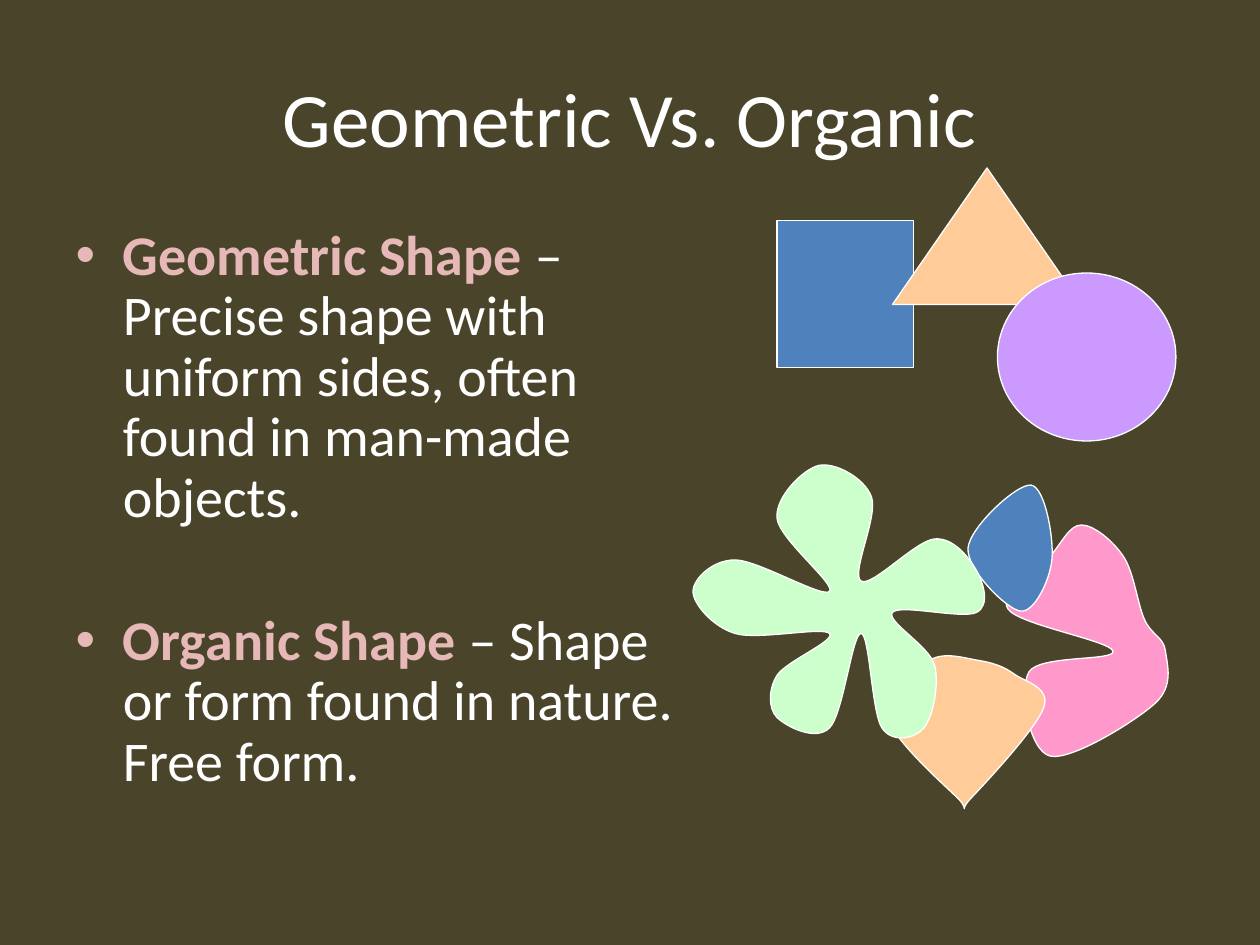
from pptx import Presentation
from pptx.dml.color import RGBColor
from pptx.enum.shapes import MSO_SHAPE
from pptx.enum.text import MSO_ANCHOR, MSO_AUTO_SIZE, PP_ALIGN
from pptx.oxml.ns import qn
from pptx.util import Inches, Pt

RECTANGLE, TRIANGLE, OVAL = MSO_SHAPE.RECTANGLE, MSO_SHAPE.ISOSCELES_TRIANGLE, MSO_SHAPE.OVAL
MIDDLE, NO_FIT, CENTER = MSO_ANCHOR.MIDDLE, MSO_AUTO_SIZE.NONE, PP_ALIGN.CENTER

COLORS = {
    "olive": "4A452A", "white": "FFFFFF", "rose": "E6B9B8", "blue": "4F81BD",
    "peach": "FFCC99", "violet": "CC99FF", "pink": "FF99CC", "mint": "CCFFCC",
}
CELL = Inches(1) // 12  # the slide is a grid of 120 columns by 90 rows


def add_text(para, text, size=32, color="white", bold=False):
    span = para.add_run()
    span.text = text
    span.font.name = "Calibri"
    span.font.size = Pt(size)
    span.font.bold = bold
    span.font.color.rgb = RGBColor.from_string(COLORS[color])


def paint(shape, color):
    shape.shadow.inherit = False
    shape.fill.solid()
    shape.fill.fore_color.rgb = RGBColor.from_string(COLORS[color])
    shape.line.color.rgb = RGBColor.from_string(COLORS["white"])
    shape.line.width = Pt(0.75)


deck = Presentation()
deck.slide_width, deck.slide_height = 120 * CELL, 90 * CELL
page = deck.slides.add_slide(deck.slide_layouts[1])
page.background.fill.solid()
page.background.fill.fore_color.rgb = RGBColor.from_string(COLORS["olive"])

# Title and body placeholders
title, body = page.shapes.title, page.placeholders[1]
for box, (left, top, width, height) in (
    (title, (6, 3.6, 108, 15)),
    (body, (6, 21, 61, 59.4)),
):
    box.left, box.top = round(left * CELL), round(top * CELL)
    box.width, box.height = round(width * CELL), round(height * CELL)
    box.text_frame.word_wrap = True
    box.text_frame.auto_size = NO_FIT

title.text_frame.vertical_anchor = MIDDLE
heading = title.text_frame.paragraphs[0]
heading.alignment = CENTER
add_text(heading, "Geometric Vs. Organic", size=44)

# Definitions, one bullet each
definitions = [
    ("Geometric Shape ", "– Precise shape with uniform sides, often found in man-made objects.", 6.4),
    ("Organic Shape ", "– Shape or form found in nature. Free form.", 47),
]
for index, (term, meaning, gap) in enumerate(definitions):
    para = body.text_frame.add_paragraph() if index else body.text_frame.paragraphs[0]
    para.line_spacing = 0.9
    para.space_before = Pt(gap)
    add_text(para, term, color="rose", bold=True)
    add_text(para, meaning)

# Geometric shapes: kind, colour, then left, top, width, height in cells
for kind, color, frame in (
    (RECTANGLE, "blue", (74, 21, 13, 14)),
    (TRIANGLE, "peach", (85, 16, 18, 13)),
    (OVAL, "violet", (95, 26, 17, 16)),
):
    paint(page.shapes.add_shape(kind, *(n * CELL for n in frame)), color)

# Organic shapes: colour, shift, then the points that a smooth closed curve runs through
blobs = [
    ("pink", (0, 0), [(100, 53), (96, 58), (106, 62), (98, 64), (100, 72),
                      (110, 67), (111, 62), (109, 59), (107, 53), (103, 50)]),
    ("blue", (0.2, 0.2), [(97, 58), (92, 52), (98, 46), (100, 53)]),
    ("peach", (0, 0), [(91.2, 76), (84.5, 68.2), (88.5, 62.9), (93.2, 62.9),
                       (96.6, 64.2), (99.4, 67.4), (92.5, 76)]),
    ("mint", (0, 0.33), [(79, 56), (74, 49), (78, 44), (83, 47), (82, 55),
                         (89, 51), (93, 54), (93, 58), (85, 58), (89, 63),
                         (88, 69), (84, 69), (82, 60), (79, 69), (74, 68),
                         (74, 64), (79, 60), (70, 60), (66, 56), (70, 53)]),
]
for color, (shift_x, shift_y), knots in blobs:
    points = [((x + shift_x) * CELL, (y + shift_y) * CELL) for x, y in knots]
    count = len(points)

    # Each handle is a sixth of the way between the two neighbouring points
    handles = []
    for i in range(count):
        before, after = points[i - 1], points[(i + 1) % count]
        handles.append(((after[0] - before[0]) / 6, (after[1] - before[1]) / 6))

    vertices = []
    for i in range(count):
        j = (i + 1) % count
        (x1, y1), (x2, y2) = points[i], points[j]
        (dx1, dy1), (dx2, dy2) = handles[i], handles[j]
        vertices += [(x1 + dx1, y1 + dy1), (x2 - dx2, y2 - dy2), (x2, y2)]

    builder = page.shapes.build_freeform(*points[0], scale=1.0)
    builder.add_line_segments(vertices, close=True)
    blob = builder.convert_to_shape()

    # Turn every three straight segments into one Bezier curve
    segments = list(blob.element.iter(qn("a:lnTo")))
    for i in range(0, len(segments), 3):
        curve = segments[i].makeelement(qn("a:cubicBezTo"), {})
        segments[i].addprevious(curve)
        for segment in segments[i:i + 3]:
            curve.append(segment[0])
            segment.getparent().remove(segment)
    paint(blob, color)

deck.save("out.pptx")
